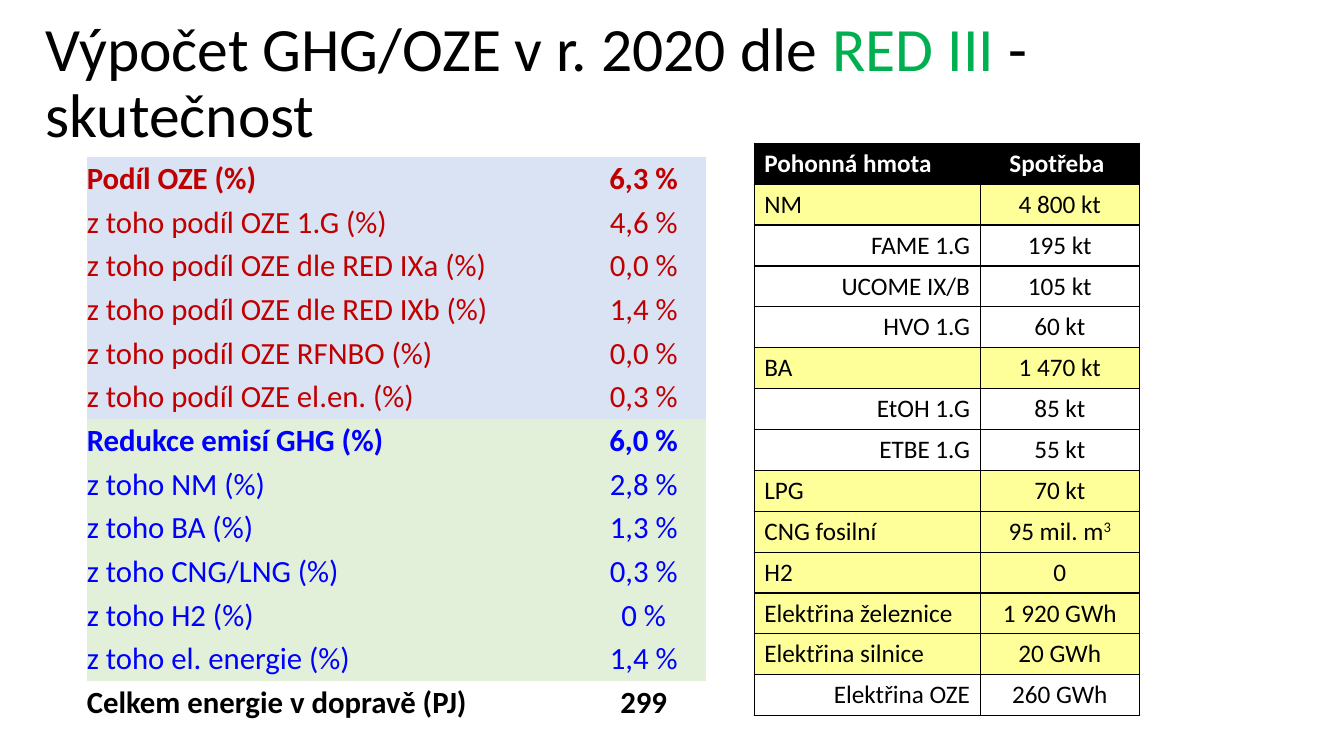
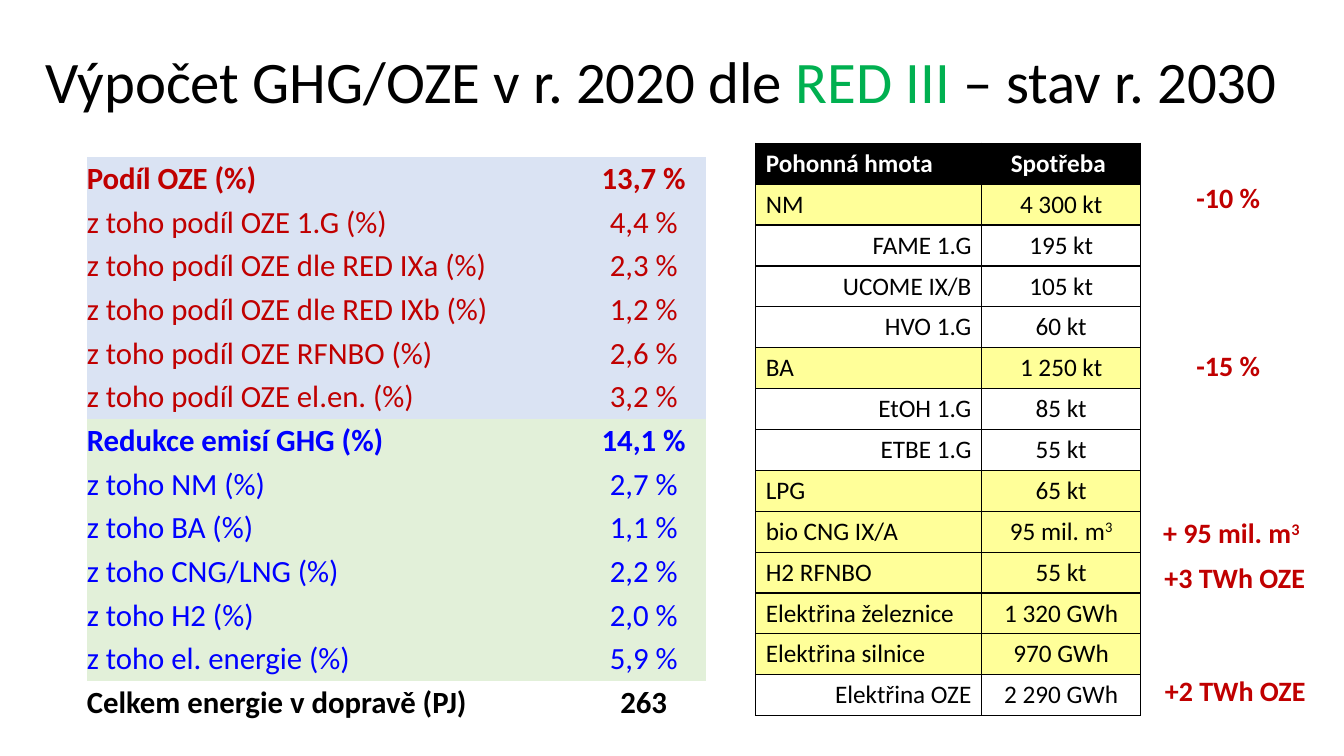
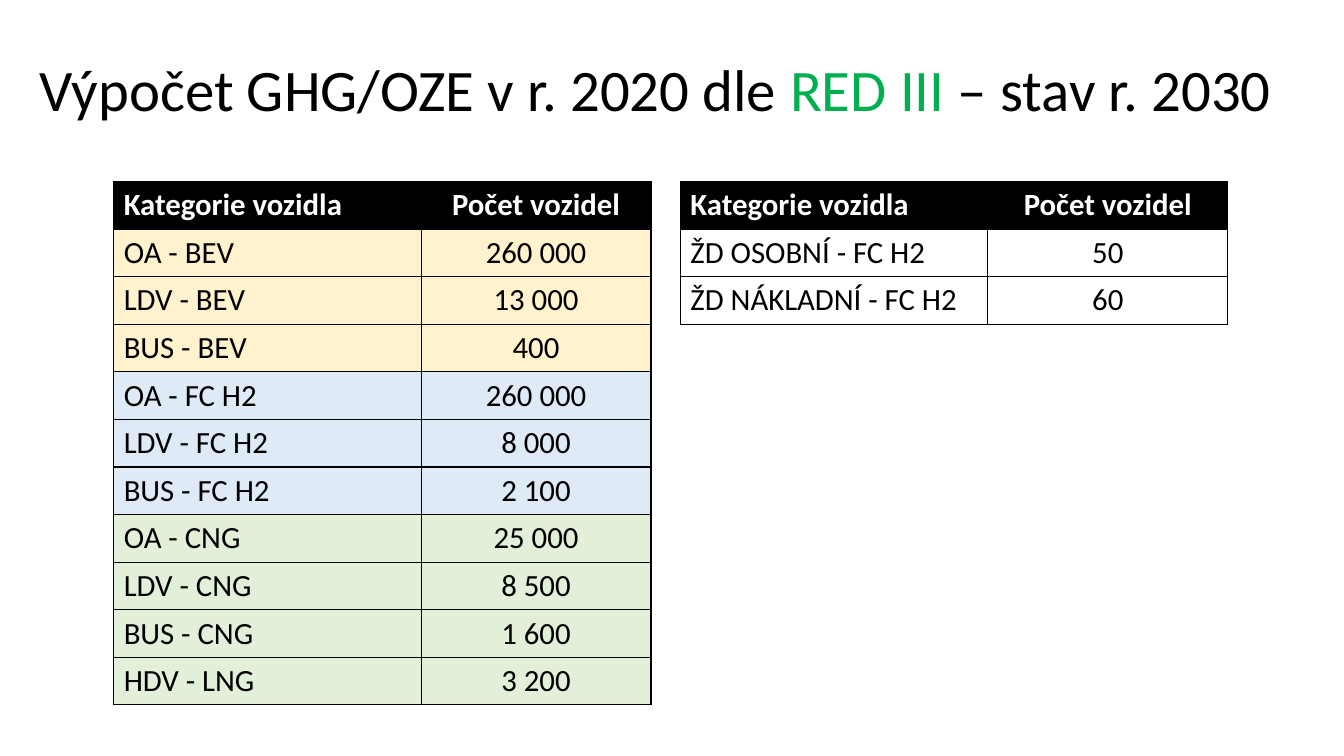
from collections import namedtuple

from lxml import etree
from pptx import Presentation
from pptx.dml.color import RGBColor
from pptx.enum.text import MSO_ANCHOR, MSO_AUTO_SIZE, PP_ALIGN
from pptx.oxml.ns import qn
from pptx.util import Pt

LEFT, CENTER, RIGHT = PP_ALIGN.LEFT, PP_ALIGN.CENTER, PP_ALIGN.RIGHT
MIDDLE = MSO_ANCHOR.MIDDLE
NO_AUTOFIT = MSO_AUTO_SIZE.NONE

FONT = "Calibri"
BLACK = RGBColor(0x00, 0x00, 0x00)
WHITE = RGBColor(0xFF, 0xFF, 0xFF)
GREEN = RGBColor(0x00, 0xB0, 0x50)
RED = RGBColor(0xC0, 0x00, 0x00)
BLUE = RGBColor(0x00, 0x00, 0xFF)
PALE_BLUE = RGBColor(0xDA, 0xE3, 0xF3)
PALE_GREEN = RGBColor(0xE2, 0xF0, 0xD9)
PALE_YELLOW = RGBColor(0xFF, 0xFF, 0x99)
PALE_GOLD = RGBColor(0xFF, 0xF2, 0xCC)
PALE_SKY = RGBColor(0xDE, 0xEB, 0xF7)

PLAIN_TABLE_STYLE = "{2D5ABB26-0587-4C30-8999-92F81FD0307C}"
TITLE_ONLY_LAYOUT = 5

# One table row: a fill of None leaves the cells clear
Row = namedtuple("Row", "label value fill color bold label_align",
                 defaults=(None, BLACK, False, LEFT))

# Renewable share and emission rows, in groups of (labels, fill, colour)
SHARE_GROUPS = [
    (["Podíl OZE (%)", "z toho podíl OZE 1.G (%)", "z toho podíl OZE dle RED IXa (%)",
      "z toho podíl OZE dle RED IXb (%)", "z toho podíl OZE RFNBO (%)",
      "z toho podíl OZE el.en. (%)"], PALE_BLUE, RED),
    (["Redukce emisí GHG (%)", "z toho NM (%)", "z toho BA (%)", "z toho CNG/LNG (%)",
      "z toho H2 (%)", "z toho el. energie (%)"], PALE_GREEN, BLUE),
    (["Celkem energie v dopravě (PJ)"], WHITE, BLACK),
]
SHARES_2020 = ["6,3 %", "4,6 %", "0,0 %", "1,4 %", "0,0 %", "0,3 %",
               "6,0 %", "2,8 %", "1,3 %", "0,3 %", "0 %", "1,4 %", "299"]
SHARES_2030 = ["13,7 %", "4,4 %", "2,3 %", "1,2 %", "2,6 %", "3,2 %",
               "14,1 %", "2,7 %", "1,1 %", "2,2 %", "2,0 %", "5,9 %", "263"]

# Fuel use; "^" starts a superscript
FUEL_COMPONENTS = {"FAME 1.G", "UCOME IX/B", "HVO 1.G", "EtOH 1.G", "ETBE 1.G",
                   "Elektřina OZE"}
BLENDED_DIESEL = [("FAME 1.G", "195 kt"), ("UCOME IX/B", "105 kt"), ("HVO 1.G", "60 kt")]
BLENDED_PETROL = [("EtOH 1.G", "85 kt"), ("ETBE 1.G", "55 kt")]
FUELS_2020 = [
    ("NM", "4 800 kt"), *BLENDED_DIESEL, ("BA", "1 470 kt"), *BLENDED_PETROL,
    ("LPG", "70 kt"), ("CNG fosilní", "95 mil. m^3"), ("H2", "0"),
    ("Elektřina železnice", "1 920 GWh"), ("Elektřina silnice", "20 GWh"),
    ("Elektřina OZE", "260 GWh"),
]
FUELS_2030 = [
    ("NM", "4 300 kt"), *BLENDED_DIESEL, ("BA", "1 250 kt"), *BLENDED_PETROL,
    ("LPG", "65 kt"), ("bio CNG IX/A", "95 mil. m^3"), ("H2 RFNBO", "55 kt"),
    ("Elektřina železnice", "1 320 GWh"), ("Elektřina silnice", "970 GWh"),
    ("Elektřina OZE", "2 290 GWh"),
]
# Change notes: text, left, top, width, alignment
CHANGES_2030 = [
    ("-10 %", 847.4, 125.3, 68.4, LEFT),
    ("-15 %", 847.4, 245.5, 68.4, LEFT),
    ("+ 95 mil. m^3", 823.7, 365, 116.6, LEFT),
    ("+3 TWh OZE", 823.7, 396.7, 116.6, CENTER),
    ("+2 TWh OZE", 820.8, 477.4, 123.1, CENTER),
]

# Vehicle counts by drive
ROAD_VEHICLES = [
    (PALE_GOLD, [("OA - BEV", "260 000"), ("LDV - BEV", "13 000"), ("BUS - BEV", "400")]),
    (PALE_SKY, [("OA - FC H2", "260 000"), ("LDV - FC H2", "8 000"),
                ("BUS - FC H2", "2 100")]),
    (PALE_GREEN, [("OA - CNG", "25 000"), ("LDV - CNG", "8 500"), ("BUS - CNG", "1 600"),
                  ("HDV - LNG", "3 200")]),
]
RAIL_VEHICLES = [(None, [("ŽD OSOBNÍ - FC H2", "50"), ("ŽD NÁKLADNÍ - FC H2", "60")])]


def add_run(paragraph, text, size, color, bold=False):
    run = paragraph.add_run()
    run.text = text
    font = run.font
    font.name, font.size, font.bold = FONT, Pt(size), bold
    font.color.rgb = color
    return run


def add_text(paragraph, text, size, color, bold, align):
    """Write text, raising what follows a caret."""
    paragraph.alignment = align
    base, _, raised = text.partition("^")
    add_run(paragraph, base, size, color, bold)
    if raised:
        superscript = add_run(paragraph, raised, size, color, bold)
        superscript.font._element.set("baseline", "30000")


def add_cell_borders(cell):
    properties = cell._tc.get_or_add_tcPr()
    for side in ("a:lnL", "a:lnR", "a:lnT", "a:lnB"):
        line = etree.SubElement(properties, qn(side), w=str(Pt(1)))
        fill = etree.SubElement(line, qn("a:solidFill"))
        etree.SubElement(fill, qn("a:srgbClr"), val=str(BLACK))


def add_grid(slide, left, top, columns, row_height, rows, size, bordered=True):
    """Two-column table; the bordered kind keeps the usual cell margins."""
    frame = slide.shapes.add_table(len(rows), len(columns), Pt(left), Pt(top),
                                   Pt(sum(columns)), Pt(row_height * len(rows)))
    table = frame.table
    table.first_row = table.horz_banding = False
    table._tbl.tblPr.find(qn("a:tableStyleId")).text = PLAIN_TABLE_STYLE
    for column, width in zip(table.columns, columns):
        column.width = Pt(width)
    for table_row, row in zip(table.rows, rows):
        table_row.height = Pt(row_height)
        contents = [(row.label, row.label_align), (row.value, CENTER)]
        for cell, (text, align) in zip(table_row.cells, contents):
            cell.vertical_anchor = MIDDLE
            if bordered:
                add_cell_borders(cell)
            else:
                cell.margin_left = cell.margin_right = 0
                cell.margin_top = cell.margin_bottom = 0
            if row.fill is None:
                cell.fill.background()
            else:
                cell.fill.solid()
                cell.fill.fore_color.rgb = row.fill
            add_text(cell.text_frame.paragraphs[0], text, size, row.color, row.bold, align)


def header_row(label, value):
    return Row(label, value, BLACK, WHITE, True)


def add_titled_slide(deck, ending, size, left, width, height):
    slide = deck.slides.add_slide(deck.slide_layouts[TITLE_ONLY_LAYOUT])
    title = slide.shapes.title
    title.left, title.top, title.width, title.height = (
        Pt(left), Pt(28.8), Pt(width), Pt(height))
    frame = title.text_frame
    frame.word_wrap, frame.auto_size = True, NO_AUTOFIT
    frame.vertical_anchor = MIDDLE
    paragraph = frame.paragraphs[0]
    paragraph.alignment, paragraph.line_spacing = LEFT, 0.9
    for text, color in [("Výpočet GHG/OZE v r. 2020 dle ", BLACK), ("RED III ", GREEN),
                        (ending, BLACK)]:
        add_run(paragraph, text, size, color)
    return slide


def add_share_table(slide, left, top, values):
    remaining = iter(values)
    rows = [Row(label, next(remaining), fill, color, label == labels[0])
            for labels, fill, color in SHARE_GROUPS for label in labels]
    add_grid(slide, left, top, [353.5, 88.6], 31.2, rows, 22, bordered=False)


def add_fuel_table(slide, left, top, fuels):
    rows = [header_row("Pohonná hmota", "Spotřeba ")]
    for label, amount in fuels:
        if label in FUEL_COMPONENTS:
            rows.append(Row(label, amount, label_align=RIGHT))
        else:
            rows.append(Row(label, amount, PALE_YELLOW))
    add_grid(slide, left, top, [161.3, 113.8], 29.2, rows, 18)


def add_vehicle_table(slide, left, top, count_width, groups):
    rows = [header_row("Kategorie vozidla", "Počet vozidel")]
    rows += [Row(label, count, fill) for fill, group in groups for label, count in group]
    add_grid(slide, left, top, [219.6, count_width], 34, rows, 22)


def add_change_note(slide, text, left, top, width, align):
    note = slide.shapes.add_textbox(Pt(left), Pt(top), Pt(width), Pt(31.5))
    note.text_frame.word_wrap = True
    add_text(note.text_frame.paragraphs[0], text, 20, RED, True, align)


def main():
    deck = Presentation()
    deck.slide_width, deck.slide_height = Pt(960), Pt(540)

    # Actual state in 2020
    actual = add_titled_slide(deck, "- skutečnost", 44, 25.2, 910, 63.4)
    add_share_table(actual, 62, 112.3, SHARES_2020)
    add_fuel_table(actual, 538.8, 102.4, FUELS_2020)

    # Outlook for 2030
    outlook = add_titled_slide(deck, "– stav r. 2030", 42, 25.2, 921.6, 63.4)
    add_share_table(outlook, 62, 112.3, SHARES_2030)
    add_fuel_table(outlook, 539.8, 102.4, FUELS_2030)
    for change in CHANGES_2030:
        add_change_note(outlook, *change)

    # Vehicles needed by 2030
    vehicles = add_titled_slide(deck, "– stav r. 2030", 42, 21, 913.7, 74.9)
    add_vehicle_table(vehicles, 81.2, 129.6, 164.2, ROAD_VEHICLES)
    add_vehicle_table(vehicles, 486, 129.6, 171.4, RAIL_VEHICLES)

    deck.save("out.pptx")


if __name__ == "__main__":
    main()
